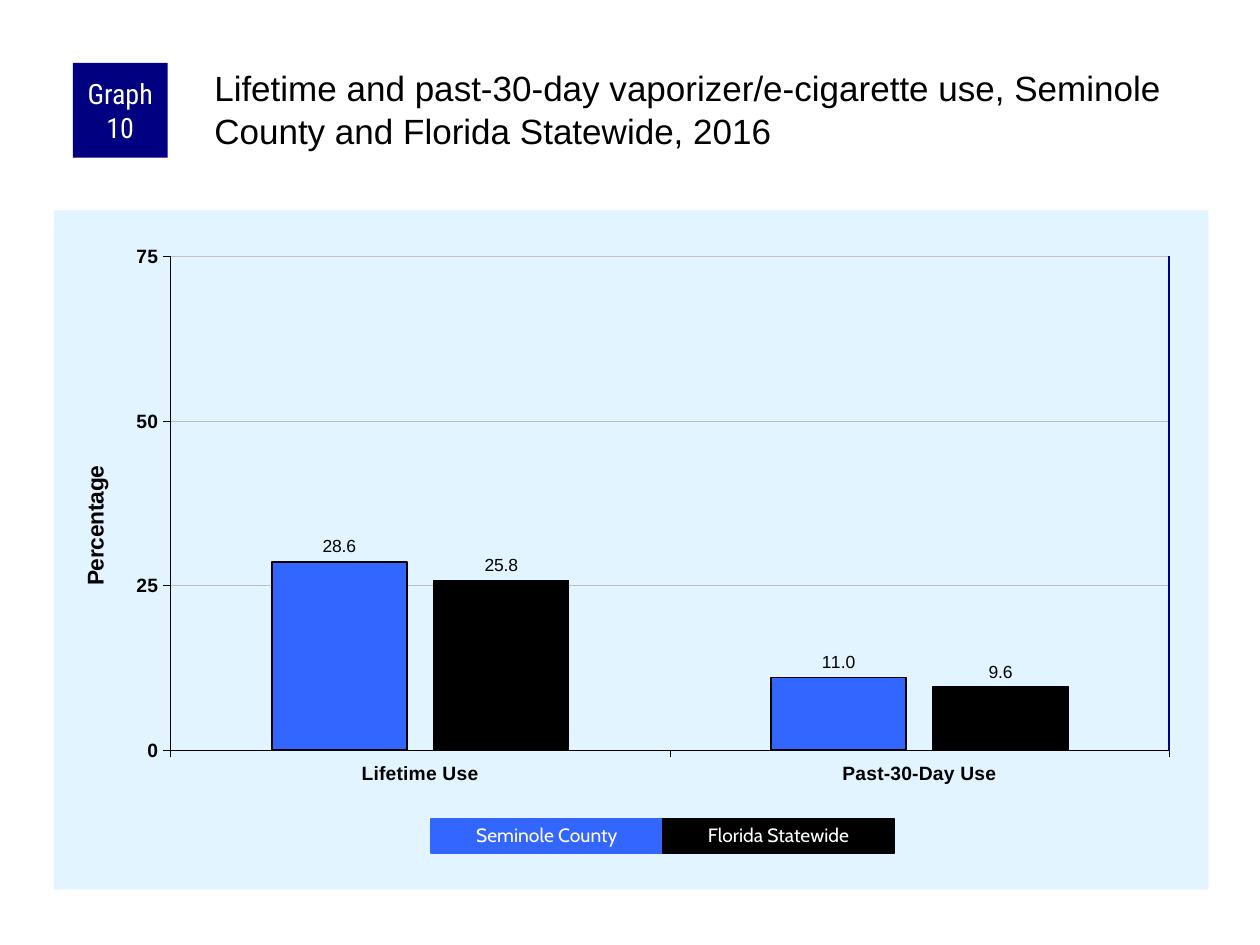
from dataclasses import dataclass
from typing import Any

from lxml import etree
from pptx import Presentation
from pptx.chart.data import CategoryChartData
from pptx.dml.color import RGBColor
from pptx.enum.chart import XL_CHART_TYPE, XL_LABEL_POSITION, XL_TICK_MARK
from pptx.enum.shapes import MSO_CONNECTOR, MSO_SHAPE
from pptx.enum.text import MSO_ANCHOR, MSO_AUTO_SIZE, PP_ALIGN
from pptx.oxml import parse_xml
from pptx.oxml.ns import nsdecls, qn
from pptx.util import Cm, Pt

COLUMNS = XL_CHART_TYPE.COLUMN_CLUSTERED
OUTSIDE_END = XL_LABEL_POSITION.OUTSIDE_END
TICK_OUTSIDE, TICK_NONE = XL_TICK_MARK.OUTSIDE, XL_TICK_MARK.NONE
STRAIGHT, RECTANGLE = MSO_CONNECTOR.STRAIGHT, MSO_SHAPE.RECTANGLE
TOP, MIDDLE = MSO_ANCHOR.TOP, MSO_ANCHOR.MIDDLE
LEFT, CENTER = PP_ALIGN.LEFT, PP_ALIGN.CENTER
NO_AUTOFIT = MSO_AUTO_SIZE.NONE

COLORS = {
    "navy": "000080",
    "blue": "3366FF",
    "black": "000000",
    "white": "FFFFFF",
    "panel": "E1F4FF",
    "grid": "C0C0C0",
}


@dataclass(frozen=True)
class Box:
    left: float
    top: float
    width: float
    height: float

    def lengths(self) -> list:
        return [Cm(v) for v in (self.left, self.top, self.width, self.height)]


@dataclass(frozen=True)
class Region:
    name: str
    color: str
    values: tuple
    outline: float


@dataclass(frozen=True)
class Label:
    text: str
    box: Box
    fill: str
    font: str
    size: float
    spacing: float
    insets: tuple
    outlined: bool


CHART = Box(1.09, 4.24, 23.27, 13.69)
PLOT = {"x": 0.1, "y": 0.07, "w": 0.87, "h": 0.73}
PLOT = {"x": 0.101, "y": 0.068, "w": 0.865, "h": 0.727}
AXIS_TITLE = {"x": 0.02, "y": 0.37}
TITLE = Box(4.24, 1.27, 20.12, 2.11)
BADGE = Box(1.47, 1.27, 1.91, 1.91)
KEY = Box(8.69, 16.51, 4.67, 0.69)
CATEGORIES = ("Lifetime Use", "Past-30-Day Use")
REGIONS = (
    Region("Seminole County", "blue", (28.6, 11.0), 1),
    Region("Florida Statewide", "black", (25.8, 9.6), 0.75),
)


def rgb(color: str) -> RGBColor:
    return RGBColor.from_string(COLORS[color])


def apply(target: Any, values: dict) -> None:
    for attribute, value in values.items():
        setattr(target, attribute, value)


def style_font(font: Any, size: float, color: str = "black", name: str = "Arial",
               bold: bool = False) -> None:
    apply(font, {"size": Pt(size), "name": name, "bold": bold})
    font.color.rgb = rgb(color)


def style_line(line: Any, color: str, width: float) -> None:
    line.color.rgb = rgb(color)
    line.width = Pt(width)


def set_layout(parent: Any, position: int, fractions: dict, inner: bool = False) -> None:
    old = parent.find(qn("c:layout"))
    if old is not None:
        parent.remove(old)
    layout = etree.Element(qn("c:layout"))
    parent.insert(position, layout)
    manual = etree.SubElement(layout, qn("c:manualLayout"))
    if inner:
        etree.SubElement(manual, qn("c:layoutTarget"), val="inner")
    for axis in "xy":
        etree.SubElement(manual, qn(f"c:{axis}Mode"), val="edge")
    for key, value in fractions.items():
        etree.SubElement(manual, qn(f"c:{key}"), val=str(value))


def style_axis(axis: Any) -> None:
    apply(axis, {"major_tick_mark": TICK_OUTSIDE, "minor_tick_mark": TICK_NONE})
    style_font(axis.tick_labels.font, 11, bold=True)
    style_line(axis.format.line, "black", 0.25)


def add_usage_chart(slide: Any) -> None:
    data = CategoryChartData(number_format="0.0")
    data.categories = CATEGORIES
    for region in REGIONS:
        data.add_series(region.name, region.values)
    chart = slide.shapes.add_chart(COLUMNS, *CHART.lengths(), data).chart
    apply(chart, {"has_title": False, "has_legend": False})
    style_font(chart.font, 11.5)

    plot = chart.plots[0]
    apply(plot, {"gap_width": 150, "overlap": -20, "vary_by_categories": False})
    for series, region in zip(plot.series, REGIONS):
        series.format.fill.solid()
        series.format.fill.fore_color.rgb = rgb(region.color)
        style_line(series.format.line, "black", region.outline)
        apply(series.data_labels, {
            "show_value": True, "position": OUTSIDE_END,
            "number_format": "0.0", "number_format_is_linked": False,
        })
        style_font(series.data_labels.font, 10)

    percentage = chart.value_axis
    style_axis(chart.category_axis)
    style_axis(percentage)
    apply(percentage, {"minimum_scale": 0, "maximum_scale": 75, "major_unit": 25})
    apply(percentage.tick_labels, {"number_format": "0", "number_format_is_linked": False})
    style_line(percentage.major_gridlines.format.line, "grid", 0.25)
    heading = percentage.axis_title
    heading.text_frame.text = "Percentage"
    style_font(heading.text_frame.paragraphs[0].runs[0].font, 13, bold=True)
    heading.text_frame._txBody.bodyPr.set("rot", "-5400000")
    heading.text_frame._txBody.bodyPr.set("vert", "horz")

    set_layout(heading._element, 1, AXIS_TITLE)
    chart_element = chart._chartSpace.find(qn("c:chart"))
    set_layout(chart_element.find(qn("c:plotArea")), 0, PLOT, inner=True)
    chart_element.addnext(parse_xml(
        f'<c:spPr {nsdecls("c", "a")}><a:solidFill><a:srgbClr val="{COLORS["panel"]}"/>'
        "</a:solidFill><a:ln><a:noFill/></a:ln></c:spPr>"
    ))


def add_right_edge(slide: Any) -> None:
    x = CHART.left + CHART.width * (PLOT["x"] + PLOT["w"])
    top = CHART.top + CHART.height * PLOT["y"]
    bottom = top + CHART.height * PLOT["h"]
    edge = slide.shapes.add_connector(STRAIGHT, Cm(x), Cm(top), Cm(x), Cm(bottom))
    style_line(edge.line, "navy", 1)
    etree.SubElement(edge._element.spPr, qn("a:effectLst"))


def set_insets(frame: Any, insets: tuple) -> None:
    sides = ("margin_left", "margin_top", "margin_right", "margin_bottom")
    apply(frame, dict(zip(sides, map(Cm, insets))))


def add_label(slide: Any, label: Label) -> None:
    block = slide.shapes.add_shape(RECTANGLE, *label.box.lengths())
    block.shadow.inherit = False
    block.fill.solid()
    block.fill.fore_color.rgb = rgb(label.fill)
    if label.outlined:
        style_line(block.line, label.fill, 0.75)
    else:
        block.line.fill.background()
    frame = block.text_frame
    apply(frame, {"text": label.text, "word_wrap": True, "vertical_anchor": MIDDLE})
    set_insets(frame, label.insets)
    paragraph = frame.paragraphs[0]
    apply(paragraph, {"alignment": CENTER, "line_spacing": label.spacing})
    style_font(paragraph.runs[0].font, label.size, "white", label.font)


def set_title(slide: Any) -> None:
    title = slide.shapes.title
    apply(title, dict(zip(("left", "top", "width", "height"), TITLE.lengths())))
    frame = title.text_frame
    apply(frame, {
        "text": "Lifetime and past-30-day vaporizer/e-cigarette use, "
                "Seminole County and Florida Statewide, 2016",
        "word_wrap": True, "auto_size": NO_AUTOFIT, "vertical_anchor": TOP,
    })
    set_insets(frame, (0.08, 0.08, 0, 0))
    frame.paragraphs[0].alignment = LEFT
    style_font(frame.paragraphs[0].runs[0].font, 20)


def main() -> None:
    deck = Presentation()
    apply(deck, {"slide_width": Cm(25.4), "slide_height": Cm(19.05)})
    slide = deck.slides.add_slide(deck.slide_layouts[5])
    set_title(slide)
    add_usage_chart(slide)
    add_right_edge(slide)
    add_label(slide, Label("Graph 10", BADGE, "navy", "Roboto Condensed", 16, 1.0,
                           (0.13, 0, 0.13, 0), False))
    for index, region in enumerate(REGIONS):
        box = Box(KEY.left + index * KEY.width, KEY.top, KEY.width, KEY.height)
        add_label(slide, Label(region.name, box, region.color, "Cabin", 11, 0.9,
                               (0.25, 0.13, 0.25, 0.13), True))
    deck.save("out.pptx")


if __name__ == "__main__":
    main()
